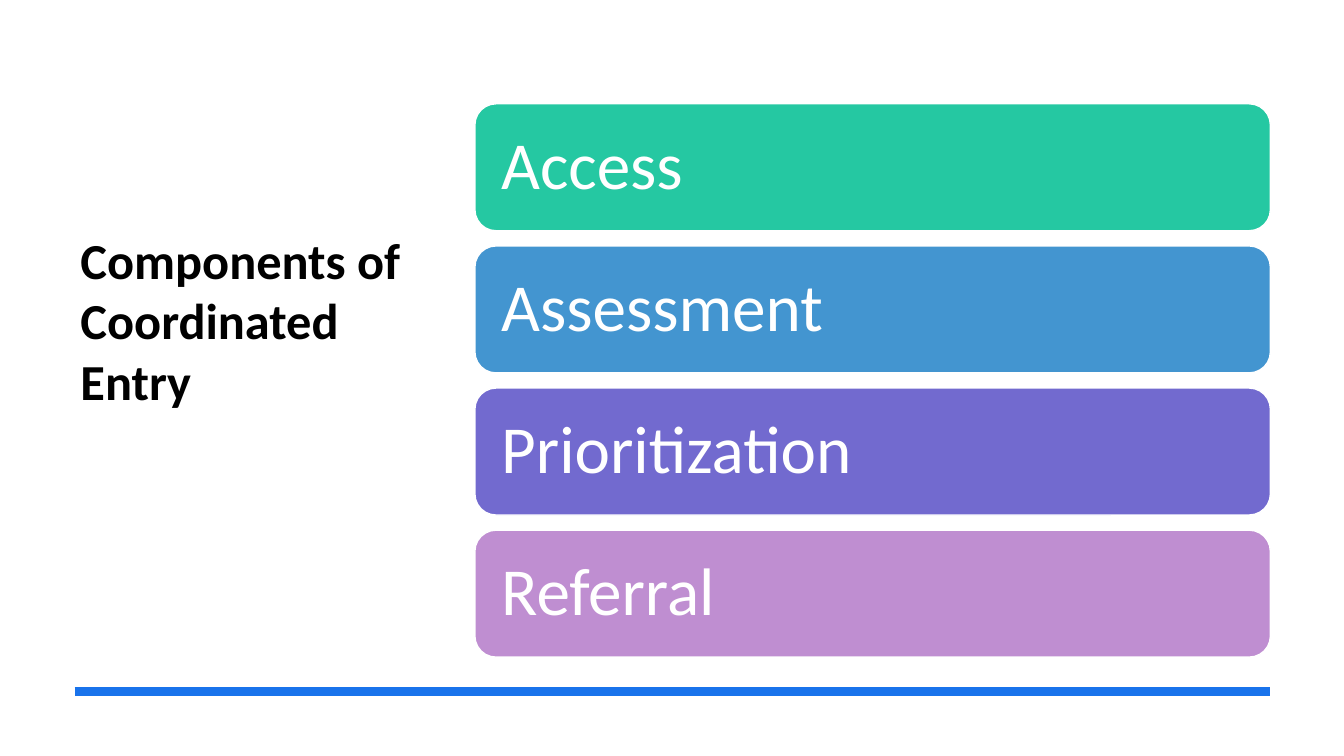
from pptx import Presentation
from pptx import util as u
from pptx.dml.color import RGBColor
from pptx.enum import shapes, text
from pptx.oxml.ns import qn
from lxml import etree


def color(value):
    return RGBColor.from_string(value)


class Deck:
    FONT = "Calibri"
    BLACK, WHITE, BLUE = "000000", "FFFFFF", "1973EB"

    def __init__(self, prs):
        self.s = prs.slides.add_slide(prs.slide_layouts[6])

    def add_run(self, p, words, size, ink, bold=False):
        r = p.add_run()
        r.text = words
        r.font.name, r.font.size, r.font.bold = self.FONT, u.Pt(size), bold
        r.font.color.rgb = color(ink)

    def title(self, words, x, y, w, h, inset_top):
        tf = self.s.shapes.add_textbox(*map(u.Inches, (x, y, w, h))).text_frame
        tf.word_wrap = True
        tf.vertical_anchor = text.MSO_ANCHOR.TOP
        tf.margin_top = u.Inches(inset_top)
        self.add_run(tf.paragraphs[0], words, 36, self.BLACK, bold=True)

    def rule(self, x1, x2, y):
        line = self.s.shapes.add_connector(
            shapes.MSO_CONNECTOR.STRAIGHT, *map(u.Inches, (x1, y, x2, y)))
        line.line.color.rgb = color(self.BLUE)
        line.line.width = u.Pt(6)
        etree.SubElement(line._element.spPr, qn("a:effectLst"))

    def bar(self, words, fill, x, y, w, h):
        sp = self.s.shapes.add_shape(
            shapes.MSO_SHAPE.ROUNDED_RECTANGLE, *map(u.Inches, (x, y, w, h)))
        sp.shadow.inherit = False
        sp.fill.solid()
        sp.fill.fore_color.rgb = color(fill)
        sp.line.color.rgb = color(self.WHITE)
        sp.line.width = u.Pt(1)
        tf = sp.text_frame
        tf.word_wrap = True
        tf.vertical_anchor = text.MSO_ANCHOR.MIDDLE
        tf.margin_left = tf.margin_right = u.Inches(0.2)
        tf.margin_top = tf.margin_bottom = u.Inches(0.2)
        p = tf.paragraphs[0]
        p.alignment = text.PP_ALIGN.LEFT
        p.line_spacing = 0.9
        self.add_run(p, words, 48, self.WHITE)


def main():
    prs = Presentation()
    prs.slide_width, prs.slide_height = u.Inches(13.33), u.Inches(7.5)
    deck = Deck(prs)

    # Title and bottom rule
    deck.title("Components of Coordinated Entry", 0.7, 1, 3.4, 4.55, inset_top=1.27)
    deck.rule(0.74, 12.6, 6.86)

    # Stack of components
    components = [("Access", "25C8A2"), ("Assessment", "4395D0"),
                  ("Prioritization", "726ACF"), ("Referral", "BF8ED1")]
    for i, (name, fill) in enumerate(components):
        deck.bar(name, fill, 4.71, 1.03 + i * 1.41, 7.89, 1.26)

    prs.save("out.pptx")


if __name__ == "__main__":
    main()
